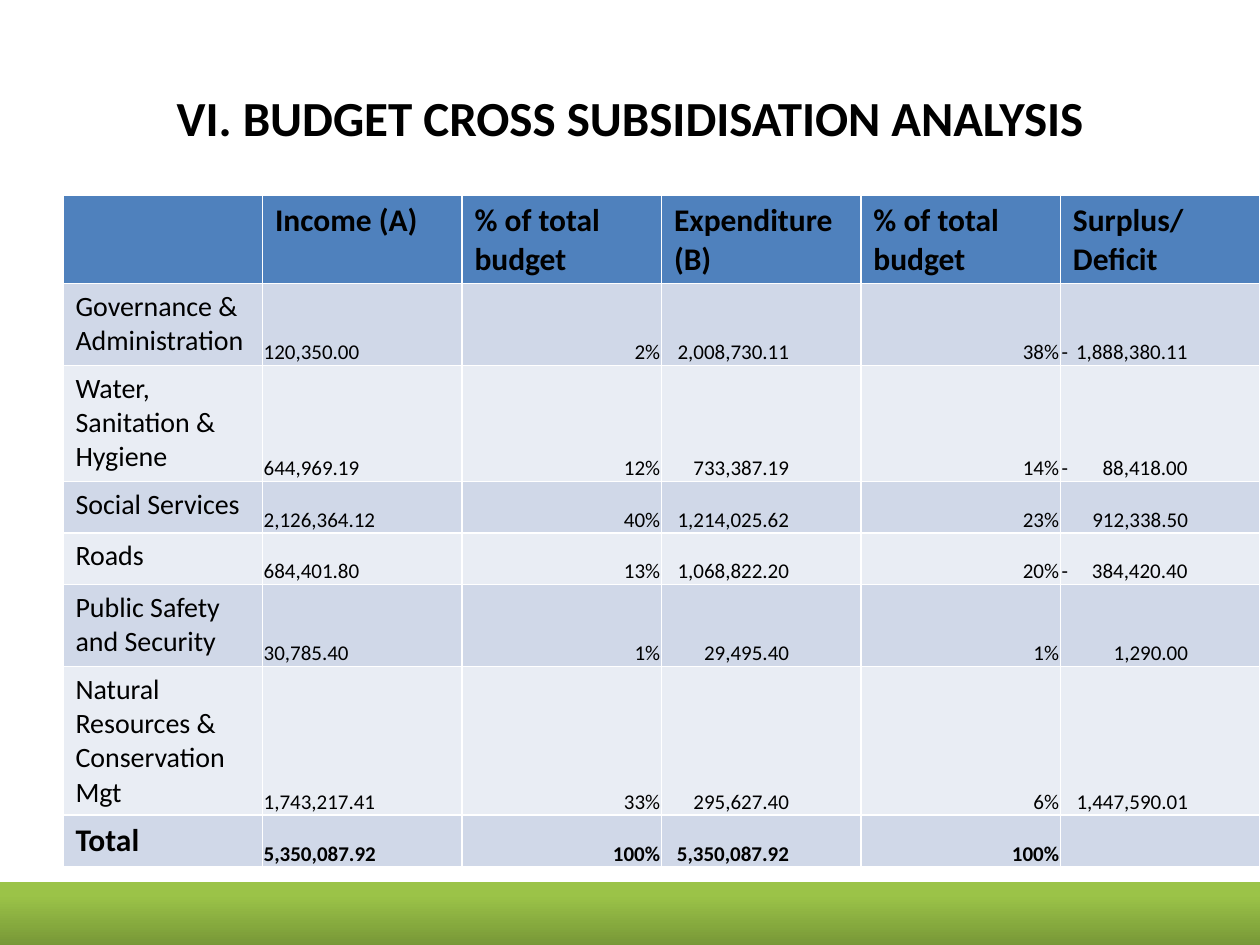
"""Build the budget cross subsidisation slide."""
from lxml import etree
from pptx import Presentation
from pptx.dml.color import RGBColor
from pptx.enum.shapes import MSO_SHAPE
from pptx.enum.text import MSO_ANCHOR, PP_ALIGN
from pptx.oxml.ns import qn
from pptx.util import Inches, Pt

LEFT, CENTER, RIGHT = PP_ALIGN.LEFT, PP_ALIGN.CENTER, PP_ALIGN.RIGHT
RECTANGLE = MSO_SHAPE.RECTANGLE
MIDDLE, BOTTOM = MSO_ANCHOR.MIDDLE, MSO_ANCHOR.BOTTOM

WIDTH, HEIGHT = 10, 7.5
TITLE = "VI. BUDGET CROSS SUBSIDISATION ANALYSIS"
ROWS = [
    ("", "Income (A)", "% of total budget", "Expenditure (B)", "% of total budget", "Surplus/Deficit"),
    ("Governance & Administration", "120,350.00", "2%", "2,008,730.11", "38%", "-\t1,888,380.11"),
    ("Water, Sanitation & Hygiene", "644,969.19", "12%", "733,387.19", "14%", "-\t88,418.00"),
    ("Social Services", "2,126,364.12", "40%", "1,214,025.62", "23%", "912,338.50"),
    ("Roads", "684,401.80", "13%", "1,068,822.20", "20%", "-\t384,420.40"),
    ("Public Safety and Security", "30,785.40", "1%", "29,495.40", "1%", "1,290.00"),
    ("Natural Resources & Conservation Mgt", "1,743,217.41", "33%", "295,627.40", "6%", "1,447,590.01"),
    ("Total", "5,350,087.92", "100%", "5,350,087.92", "100%", ""),
]
ROW_HEIGHTS = [0.7, 0.65, 0.92, 0.41, 0.41, 0.65, 1.18, 0.41]
TABLE_LEFT, TABLE_TOP, TABLE_WIDTH = 0.5, 1.55, 9.5
HEADER_FILL, BAND_FILLS = "4F81BD", ("E9EDF4", "D0D8E8")
INSET, AMOUNT_INSET, AMOUNT_TAB = 0.01, 0.57, 1.0
ALIGNMENTS = [LEFT, LEFT, RIGHT, RIGHT, RIGHT, RIGHT]
AMOUNT_COLUMNS = (3, 5)


def color(value):
    return RGBColor.from_string(value)


def apply(target, values):
    for name, value in values.items():
        setattr(target, name, value)


def write(frame, text, size, bold, alignment):
    paragraph = frame.paragraphs[0]
    paragraph.alignment = alignment
    if text:
        run = paragraph.add_run()
        run.text = text
        apply(run.font, {"name": "Calibri", "size": Pt(size), "bold": bold})
        run.font.color.rgb = color("000000")
    return paragraph


def add_title(slide):
    box = slide.shapes.add_textbox(Inches(0.5), Inches(0.3), Inches(9), Inches(1.25))
    apply(box.text_frame, {"word_wrap": True, "vertical_anchor": MIDDLE})
    write(box.text_frame, TITLE, 28, True, CENTER)


def add_footer_bar(slide):
    bar = slide.shapes.add_shape(RECTANGLE, 0, Inches(7), Inches(10.21), Inches(0.51))
    bar.shadow.inherit = False
    bar.line.fill.background()
    bar.fill.gradient()
    bar.fill.gradient_angle = 90
    for stop, position, value in zip(bar.fill.gradient_stops, (0, 0.8), ("779737", "9BC348")):
        stop.position = position
        stop.color.rgb = color(value)


def add_right_tab(paragraph):
    tabs = etree.SubElement(paragraph._p.get_or_add_pPr(), qn("a:tabLst"))
    etree.SubElement(tabs, qn("a:tab"), pos=str(Inches(AMOUNT_TAB)), algn="r")


def fill_number(cell, text, column, bold):
    signed = "\t" in text
    inset = AMOUNT_INSET if column in AMOUNT_COLUMNS and not signed else INSET
    apply(cell, {"vertical_anchor": BOTTOM, "margin_left": Inches(INSET), "margin_top": Inches(INSET),
                 "margin_right": Inches(inset), "margin_bottom": 0})
    paragraph = write(cell.text_frame, text, 12, bold, LEFT if signed else ALIGNMENTS[column])
    if signed:
        add_right_tab(paragraph)


def add_budget_table(slide):
    columns = len(ROWS[0])
    table = slide.shapes.add_table(len(ROWS), columns, Inches(TABLE_LEFT), Inches(TABLE_TOP),
                                   Inches(TABLE_WIDTH), Inches(sum(ROW_HEIGHTS))).table
    table.horz_banding = False
    for column in table.columns:
        column.width = Inches(TABLE_WIDTH / columns)
    for row, (height, texts) in enumerate(zip(ROW_HEIGHTS, ROWS)):
        table.rows[row].height = Inches(height)
        header, total = row == 0, row == len(ROWS) - 1
        for column, text in enumerate(texts):
            cell = table.cell(row, column)
            cell.fill.solid()
            cell.fill.fore_color.rgb = color(HEADER_FILL if header else BAND_FILLS[row % 2])
            if header or column == 0:
                strong = header or total
                write(cell.text_frame, text, 18 if strong else 16, strong, LEFT)
            elif text:
                fill_number(cell, text, column, total)


def main():
    presentation = Presentation()
    apply(presentation, {"slide_width": Inches(WIDTH), "slide_height": Inches(HEIGHT)})
    slide = presentation.slides.add_slide(presentation.slide_layouts[6])
    add_title(slide)
    add_footer_bar(slide)
    add_budget_table(slide)
    presentation.save("out.pptx")


if __name__ == "__main__":
    main()
